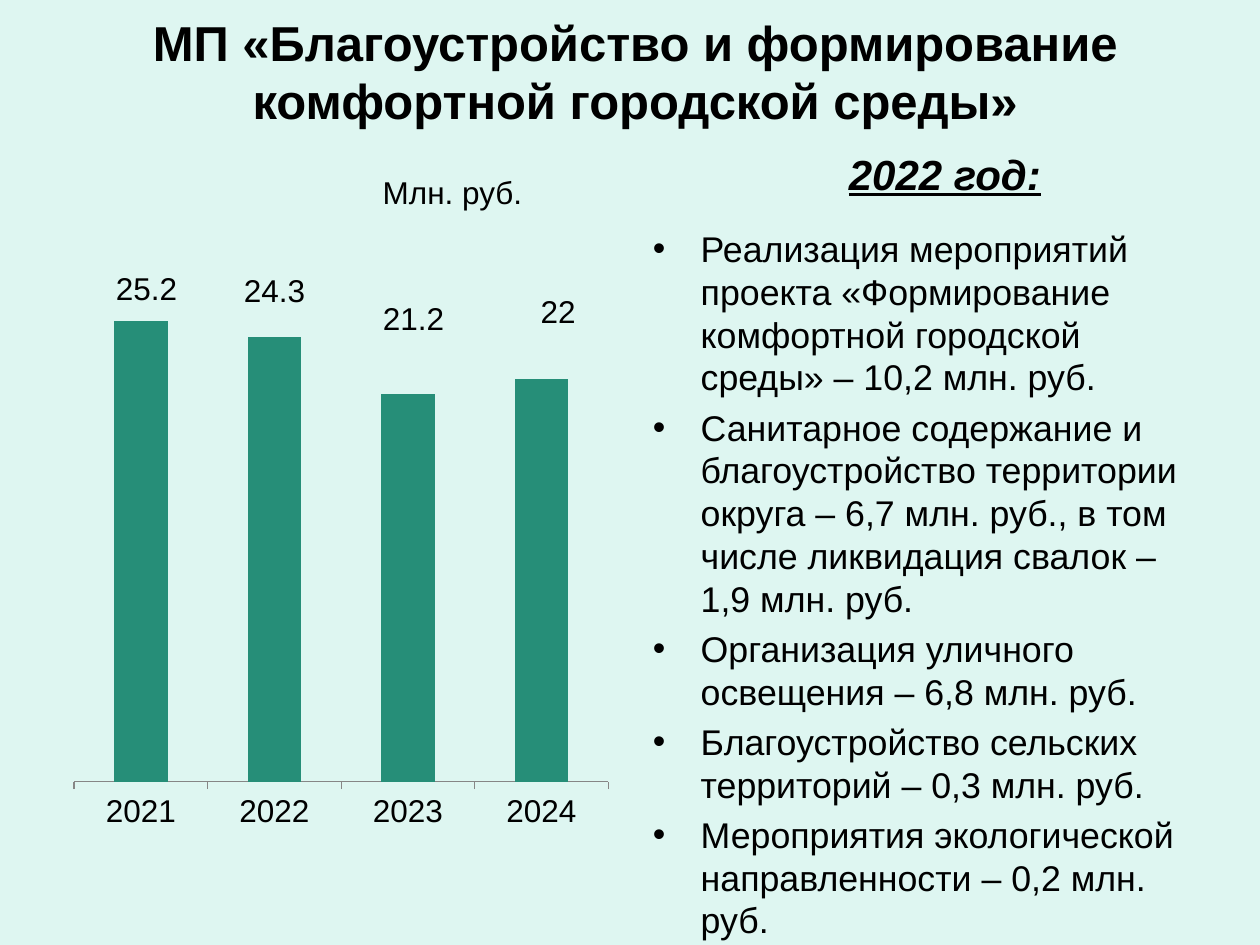
from lxml.etree import SubElement
from pptx import Presentation
from pptx.chart.data import CategoryChartData
from pptx.dml.color import RGBColor
from pptx.enum.chart import XL_CHART_TYPE as Chart, XL_LABEL_POSITION as LabelPos, XL_TICK_MARK as Tick
from pptx.enum.text import MSO_ANCHOR as Anchor, MSO_AUTO_SIZE as AutoSize, PP_ALIGN as Align
from pptx.oxml import parse_xml
from pptx.oxml.ns import nsdecls, qn
from pptx.util import Inches, Pt

COLS, ROWS = 120, 90
YEARS = ["2021", "2022", "2023", "2024"]
SPENDING = [25.2, 24.3, 21.2, 22]
LABEL_SHIFTS = [(0.01, -0.42), (0, -0.43), (0.01, -0.43), (0.03, -0.43)]
MEASURES = [
    "Реализация мероприятий проекта «Формирование комфортной городской среды» – 10,2 млн. руб.",
    "Санитарное содержание и благоустройство территории округа – 6,7 млн. руб., "
    "в том числе ликвидация свалок – 1,9 млн. руб.",
    "Организация уличного освещения – 6,8 млн. руб.",
    "Благоустройство сельских территорий – 0,3 млн. руб.",
    "Мероприятия экологической направленности – 0,2 млн. руб.",
]


def rgb(color):
    return RGBColor.from_string(color)


def style_font(font, size, color="000000", bold=False, italic=False, underline=False):
    font.name, font.size = "Arial", Pt(size)
    font.bold, font.italic, font.underline = bold, italic, underline
    font.color.rgb = rgb(color)


def write(p, text, align=Align.CENTER, **style):
    p.alignment = align
    r = p.add_run()
    r.text = text
    style_font(r.font, **style)


def add_layout(parent, index, **values):
    """Insert a manual chart layout as the given child of parent."""
    layout = parse_xml(f"<c:layout {nsdecls('c')}><c:manualLayout/></c:layout>")
    for tag, value in values.items():
        SubElement(layout[0], qn(f"c:{tag}")).set("val", str(value))
    parent.insert(index, layout)


class SlideBuilder:
    background, bar, axis = "DEF6F1", "268E78", "868686"

    def __init__(self, prs):
        self.prs = prs
        self.slide = prs.slides.add_slide(prs.slide_layouts[5])
        fill = self.slide.background.fill
        fill.solid()
        fill.fore_color.rgb = rgb(self.background)

    def box(self, col, row, cols, rows):
        """Turn grid units into left, top, width and height."""
        unit_x, unit_y = self.prs.slide_width / COLS, self.prs.slide_height / ROWS
        return [int(v) for v in (col * unit_x, row * unit_y, cols * unit_x, rows * unit_y)]

    def frame(self, sp, anchor):
        tf = sp.text_frame
        tf.word_wrap, tf.auto_size, tf.vertical_anchor = True, AutoSize.NONE, anchor
        return tf

    def title(self, text, place, **style):
        sp = self.slide.shapes.title
        sp.left, sp.top, sp.width, sp.height = self.box(*place)
        write(self.frame(sp, Anchor.MIDDLE).paragraphs[0], text, **style)

    def caption(self, text, place, **style):
        sp = self.slide.shapes.add_textbox(*self.box(*place))
        write(self.frame(sp, Anchor.MIDDLE).paragraphs[0], text, **style)

    def bullets(self, items, place, size):
        sp = self.slide.shapes.add_textbox(*self.box(*place))
        tf = self.frame(sp, Anchor.TOP)
        indent = Inches(0.38)
        for i, item in enumerate(items):
            p = tf.add_paragraph() if i else tf.paragraphs[0]
            write(p, item, align=Align.LEFT, size=size)
            p.space_before = Pt(size * 0.2)
            pPr = p._p.get_or_add_pPr()
            pPr.set("marL", str(indent))
            pPr.set("indent", str(-indent))
            SubElement(pPr, qn("a:buFont")).set("typeface", "Arial")
            SubElement(pPr, qn("a:buChar")).set("char", "•")

    def columns(self, categories, values, label_shifts, place, size):
        data = CategoryChartData()
        data.categories = categories
        data.add_series("Series 1", values)
        chart = self.slide.shapes.add_chart(Chart.COLUMN_STACKED, *self.box(*place), data).chart
        chart.has_legend = chart.has_title = False
        style_font(chart.font, size)

        value_axis = chart.value_axis
        value_axis.minimum_scale, value_axis.maximum_scale = 0, 30
        value_axis.has_major_gridlines = value_axis.visible = False
        category_axis = chart.category_axis
        category_axis.major_tick_mark = Tick.OUTSIDE
        category_axis.format.line.color.rgb = rgb(self.axis)

        plot = chart.plots[0]
        plot.gap_width, plot.overlap, plot.vary_by_categories = 150, 100, False
        series = plot.series[0]
        series.format.fill.solid()
        series.format.fill.fore_color.rgb = rgb(self.bar)
        series.data_labels.show_value = True
        for i, (x, y) in enumerate(label_shifts):
            label = series.points[i].data_label
            style_font(label.font, size)
            label.position = LabelPos.CENTER
            add_layout(label._dLbl, 1, x=x, y=y)
        self.hide_leader_lines(series.data_labels._element)

        plot_area = chart._chartSpace.chart.plotArea
        for old in plot_area.findall(qn("c:layout")):
            plot_area.remove(old)
        add_layout(plot_area, 0, layoutTarget="inner", xMode="edge", yMode="edge",
                   x=0.02, y=0.02, w=0.96, h=0.88)

    def hide_leader_lines(self, labels):
        for old in labels.findall(qn("c:showLeaderLines")):
            labels.remove(old)
        SubElement(labels, qn("c:showLeaderLines")).set("val", "0")
        labels.append(parse_xml(
            f'<c:extLst {nsdecls("c")}><c:ext uri="{{CE6537A1-D6FC-4f65-9D91-7224C49458BB}}"'
            ' xmlns:c15="http://schemas.microsoft.com/office/drawing/2012/chart">'
            '<c15:showLeaderLines val="0"/></c:ext></c:extLst>'))


def main():
    prs = Presentation()
    prs.slide_width, prs.slide_height = Inches(10), Inches(7.5)
    s = SlideBuilder(prs)
    s.title("МП «Благоустройство и формирование комфортной городской среды»",
            (3, 3, 115, 7.5), size=28, bold=True)
    s.columns(YEARS, SPENDING, LABEL_SHIFTS, (6, 21, 53, 59.4), size=18)
    s.bullets(MEASURES, (61, 21, 53, 59.4), size=20.4)
    s.caption("2022 год:", (78, 13, 24, 7), size=24, bold=True, italic=True, underline=True)
    s.caption("Млн. руб.", (34.6, 16.5, 17, 3.5), size=18)
    prs.save("out.pptx")


if __name__ == "__main__":
    main()
